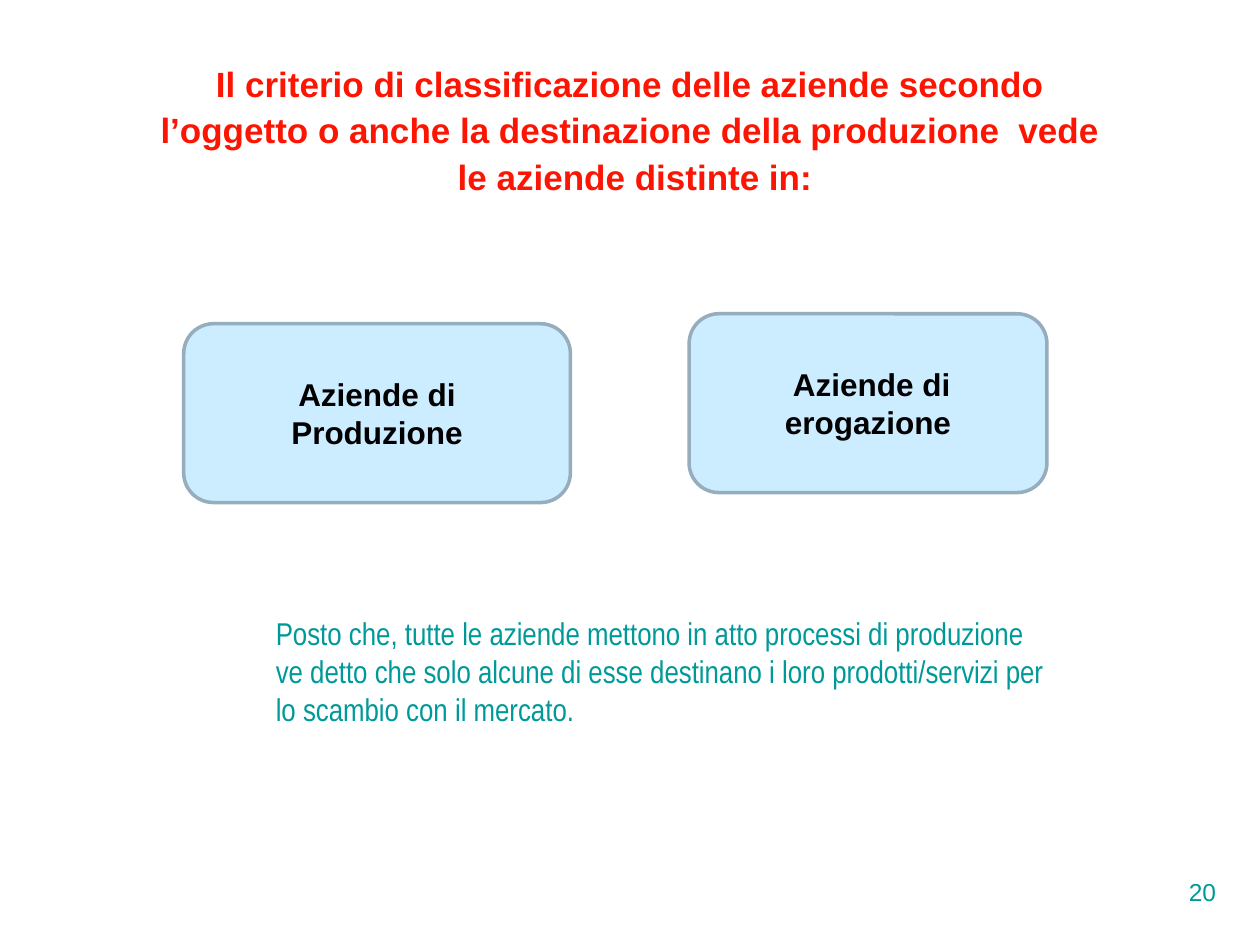
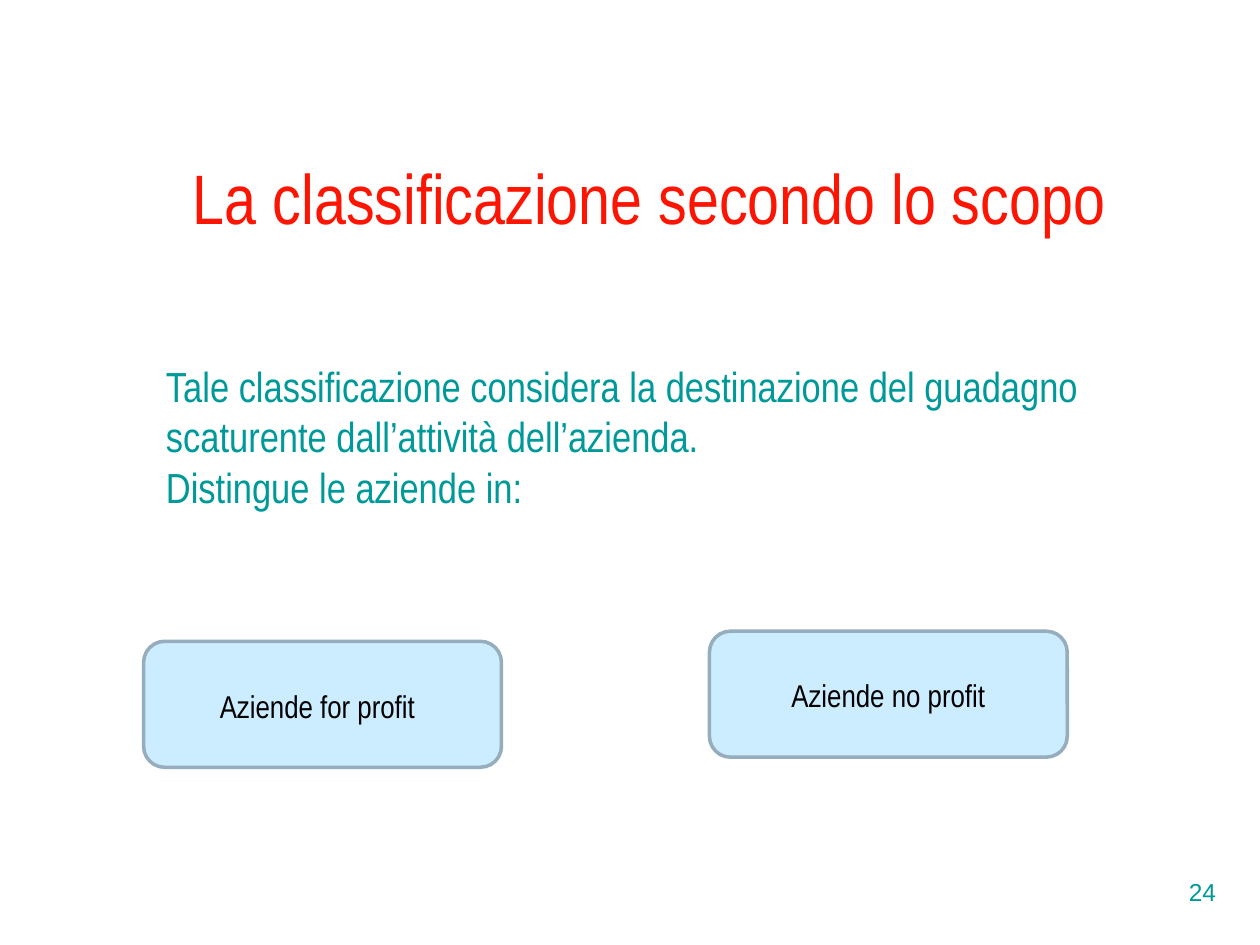
from pptx import Presentation
from pptx.dml.color import RGBColor
from pptx.enum.shapes import MSO_SHAPE
from pptx.enum.text import MSO_ANCHOR, PP_ALIGN
from pptx.util import Pt

RED = RGBColor(0xFD, 0x15, 0x03)
TEAL = RGBColor(0x00, 0x99, 0x99)
BLACK = RGBColor(0x01, 0x00, 0x00)
PALE_BLUE = RGBColor(0xCC, 0xEC, 0xFF)
GREY_BLUE = RGBColor(0x95, 0xAD, 0xBC)
SANS, NARROW = "Arial", "Arial Narrow"
LEFT, CENTER, RIGHT = PP_ALIGN.LEFT, PP_ALIGN.CENTER, PP_ALIGN.RIGHT
TOP, MIDDLE, BOTTOM = MSO_ANCHOR.TOP, MSO_ANCHOR.MIDDLE, MSO_ANCHOR.BOTTOM
ROUNDED = MSO_SHAPE.ROUNDED_RECTANGLE


def add_text(slide, box, text, size, font, color, align=LEFT, anchor=TOP,
             bold=False, before=0, spacing=1.0):
    sp = slide.shapes.add_textbox(*map(Pt, box))
    write(sp, text, size, font, color, align, anchor, bold, before, spacing)


def write(sp, text, size, font, color, align, anchor, bold=False, before=0, spacing=1.0):
    tf = sp.text_frame
    tf.word_wrap = True
    tf.vertical_anchor = anchor
    tf.text = text
    for p in tf.paragraphs:
        p.alignment = align
        p.space_before = Pt(before)
        p.line_spacing = spacing
        for r in p.runs:
            r.font.size = Pt(size)
            r.font.name = font
            r.font.bold = bold
            r.font.color.rgb = color


prs = Presentation()
prs.slide_width, prs.slide_height = Pt(720), Pt(540)
blank = prs.slide_layouts[6]
criterion = prs.slides.add_slide(blank)
purpose = prs.slides.add_slide(blank)

for slide, number in ((criterion, "20"), (purpose, "24")):
    add_text(slide, (552.2, 491.8, 149.8, 36), number, 14, SANS, TEAL, RIGHT, MIDDLE)

add_text(criterion, (56.9, 18, 612, 98.6),
         "Il criterio di classificazione delle aziende secondo \n"
         "l’oggetto o anche la destinazione della produzione  vede \n"
         "le aziende distinte in:",
         20, SANS, RED, CENTER, BOTTOM, bold=True, before=5, spacing=0.9)
add_text(purpose, (64.8, 31.7, 612, 108), "La classificazione secondo lo scopo",
         40, NARROW, RED, CENTER, BOTTOM, before=10)

add_text(criterion, (150.5, 347.3, 459.4, 75),
         "Posto che, tutte le aziende mettono in atto processi di produzione "
         "ve detto che solo alcune di esse destinano i loro prodotti/servizi "
         "per lo scambio con il mercato.", 18, NARROW, TEAL)
add_text(purpose, (87.8, 202.4, 578.2, 98),
         "Tale classificazione considera la destinazione del guadagno "
         "scaturente dall’attività dell’azienda.\n"
         "Distingue le aziende in:", 24, NARROW, TEAL)

cards = (
    (criterion, (105, 185, 221, 102.2), "Aziende di\nProduzione"),
    (criterion, (393.8, 179.3, 204.5, 102.2), " Aziende di\nerogazione"),
    (purpose, (405.4, 360.7, 204.5, 72), ""),
    (purpose, (82.1, 366.5, 204.5, 72), ""),
)
for slide, box, label in cards:
    sp = slide.shapes.add_shape(ROUNDED, *map(Pt, box))
    sp.shadow.inherit = False
    sp.fill.solid()
    sp.fill.fore_color.rgb = PALE_BLUE
    sp.line.color.rgb = GREY_BLUE
    sp.line.width = Pt(2)
    if label:
        write(sp, label, 18, SANS, BLACK, CENTER, MIDDLE, bold=True)

for box, label in (((416.9, 383, 181.4, 29.5), "Aziende no profit"),
                   ((87.8, 388.8, 187.2, 29.5), "Aziende for profit")):
    add_text(purpose, box, label, 18, NARROW, BLACK, CENTER)

prs.save("out.pptx")
